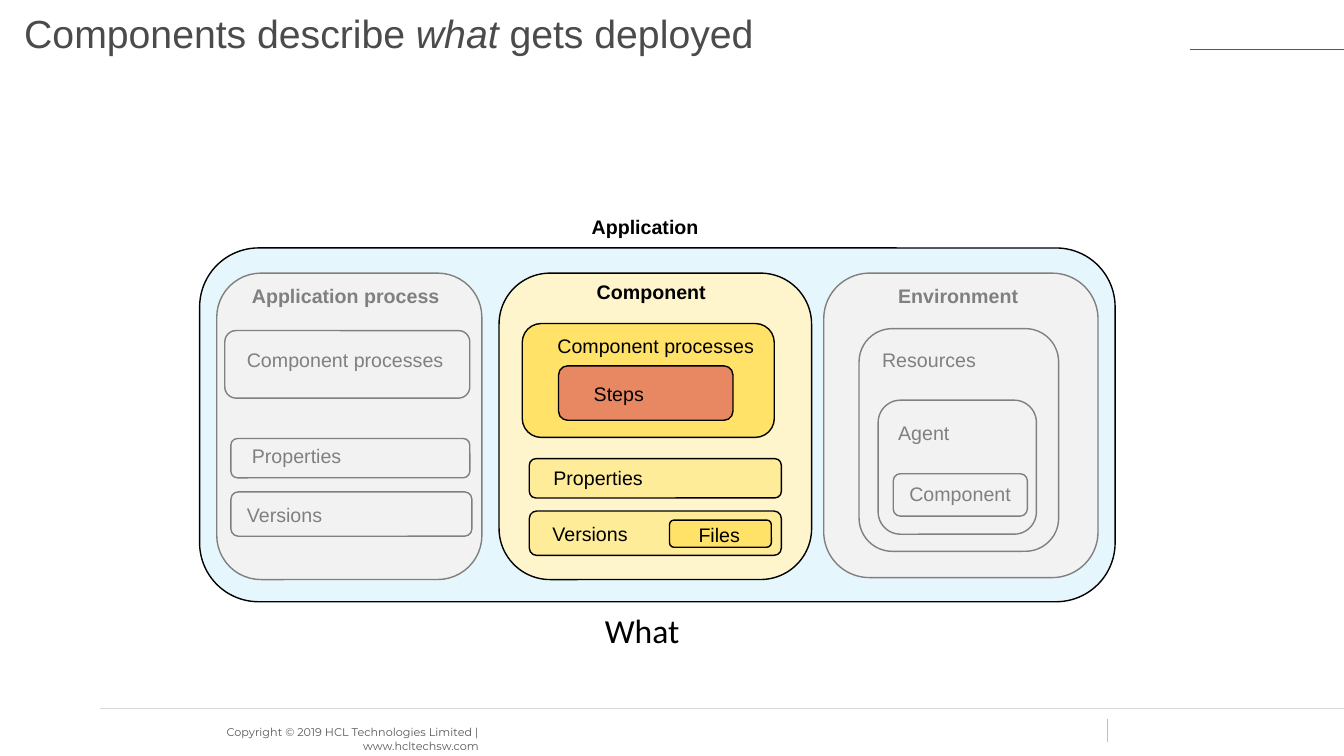
"""Build the slide that shows what a component deploys."""
from lxml import etree
from pptx import Presentation, util as u
from pptx.dml import color
from pptx.enum import shapes, text
from pptx.oxml import ns

theme = {
    "ink": "000000", "grey": "808080", "title": "4B4B4B", "foot": "595959",
    "rule": "D9D9D9", "tick": "BFBFBF", "white": "FFFFFF",
    "sky": "E6F6FD", "pale": "F2F2F2", "cream": "FFF5CC", "lemon": "FFEC99",
    "gold": "FFE267", "coral": "E88863",
    "head": 28, "big": 24, "body": 14, "small": 8,
}


def label(words, at, tint="ink", size="body", face="Arial", bold=False):
    """Add a wrapped text box and return its frame."""
    frame = slide.shapes.add_textbox(*map(u.Inches, at)).text_frame
    frame.word_wrap = True
    para = frame.paragraphs[0]
    para.text = words
    para.font.name = face
    para.font.size = u.Pt(theme[size])
    para.font.bold = bold
    para.font.color.rgb = color.RGBColor.from_string(theme[tint])
    return frame


deck = Presentation()
deck.slide_width, deck.slide_height = u.Inches(13.33), u.Inches(7.5)
slide = deck.slides.add_slide(deck.slide_layouts[5])

title = slide.shapes.title
title.left, title.top = u.Inches(0.14), u.Inches(0.04)
title.width, title.height = u.Inches(11.66), u.Inches(0.69)
title.fill.solid()
title.fill.fore_color.rgb = color.RGBColor.from_string(theme["white"])
frame = title.text_frame
frame.vertical_anchor = text.MSO_ANCHOR.TOP
frame.margin_top = u.Inches(0.05)
para = frame.paragraphs[0]
para.alignment = text.PP_ALIGN.LEFT
para.font.name = "Arial"
para.font.size = u.Pt(theme["head"])
para.font.color.rgb = color.RGBColor.from_string(theme["title"])
for words, slant in (("Components describe ", False), ("what", True), (" gets deployed", False)):
    run = para.add_run()
    run.text = words
    run.font.italic = slant

for tint, *ends in (
    ("foot", 11.8, 0.49, 13.33, 0.49),
    ("rule", 0.99, 7.03, 13.33, 7.03),
    ("tick", 10.98, 7.13, 10.98, 7.36),
):
    line = slide.shapes.add_connector(shapes.MSO_CONNECTOR.STRAIGHT, *map(u.Inches, ends))
    line.line.color.rgb = color.RGBColor.from_string(theme[tint])
    line.line.width = u.Pt(0.5)
    etree.SubElement(line._element.spPr, ns.qn("a:effectLst"))

foot = label("Copyright © 2019 HCL Technologies Limited | www.hcltechsw.com",
             (1.54, 7.15, 3.21, 0.24), "foot", "small", "Montserrat")
foot.margin_right = 0
foot.paragraphs[0].alignment = text.PP_ALIGN.RIGHT
label("What", (5.9, 6, 1.1, 0.5), size="big", face="Calibri")

panels = (
    ("ink", (
        ("sky", 1.98, 2.46, 9.08, 3.51),
    ), (
        ("Application", 5.77, 2.08, 2.26),
    )),
    ("grey", (
        ("pale", 2.15, 2.71, 2.63, 3.04),
        ("pale", 2.23, 3.28, 2.43, 0.67),
        ("pale", 2.29, 4.35, 2.37, 0.39),
        ("pale", 2.29, 4.88, 2.39, 0.44),
    ), (
        ("Application process", 2.4, 2.77, 2.26),
        ("Component processes", 2.35, 3.4, 2.26),
        ("Properties", 2.4, 4.35, 2.26),
        ("Versions", 2.35, 4.94, 1.11),
    )),
    ("ink", (
        ("cream", 4.95, 2.71, 3.1, 3.04),
        ("gold", 5.18, 3.21, 2.5, 1.13),
        ("coral", 5.54, 3.63, 1.73, 0.54),
        ("lemon", 5.25, 4.55, 2.5, 0.39),
        ("lemon", 5.25, 5.07, 2.5, 0.44),
        ("gold", 6.64, 5.16, 1.01, 0.27),
    ), (
        ("Component", 5.82, 2.73, 1.52),
        ("Component processes", 5.43, 3.26, 2.26),
        ("Steps", 5.79, 3.74, 1.04),
        ("Properties", 5.39, 4.57, 2.26),
        ("Versions", 5.38, 5.13, 1.11),
        ("Files", 6.83, 5.14, 1.2),
    )),
    ("grey", (
        ("pale", 8.17, 2.71, 2.72, 3.02),
        ("pale", 8.52, 3.26, 1.98, 2.21),
        ("pale", 8.71, 3.97, 1.57, 1.33),
        ("pale", 8.86, 4.7, 1.33, 0.42),
    ), (
        ("Environment", 8.81, 2.77, 1.53),
        ("Resources", 8.65, 3.4, 1.68),
        ("Agent", 8.81, 4.13, 1.47),
        ("Component", 8.92, 4.73, 1.25),
    )),
)
for tint, boxes, names in panels:
    for fill, *at in boxes:
        box = slide.shapes.add_shape(shapes.MSO_SHAPE.ROUNDED_RECTANGLE, *map(u.Inches, at))
        box.shadow.inherit = False
        box.fill.solid()
        box.fill.fore_color.rgb = color.RGBColor.from_string(theme[fill])
        box.line.color.rgb = color.RGBColor.from_string(theme[tint])
        box.line.width = u.Pt(1)
    for rank, (words, *at) in enumerate(names):
        label(words, (*at, 0.34), tint, bold=rank == 0)

deck.save("out.pptx")
